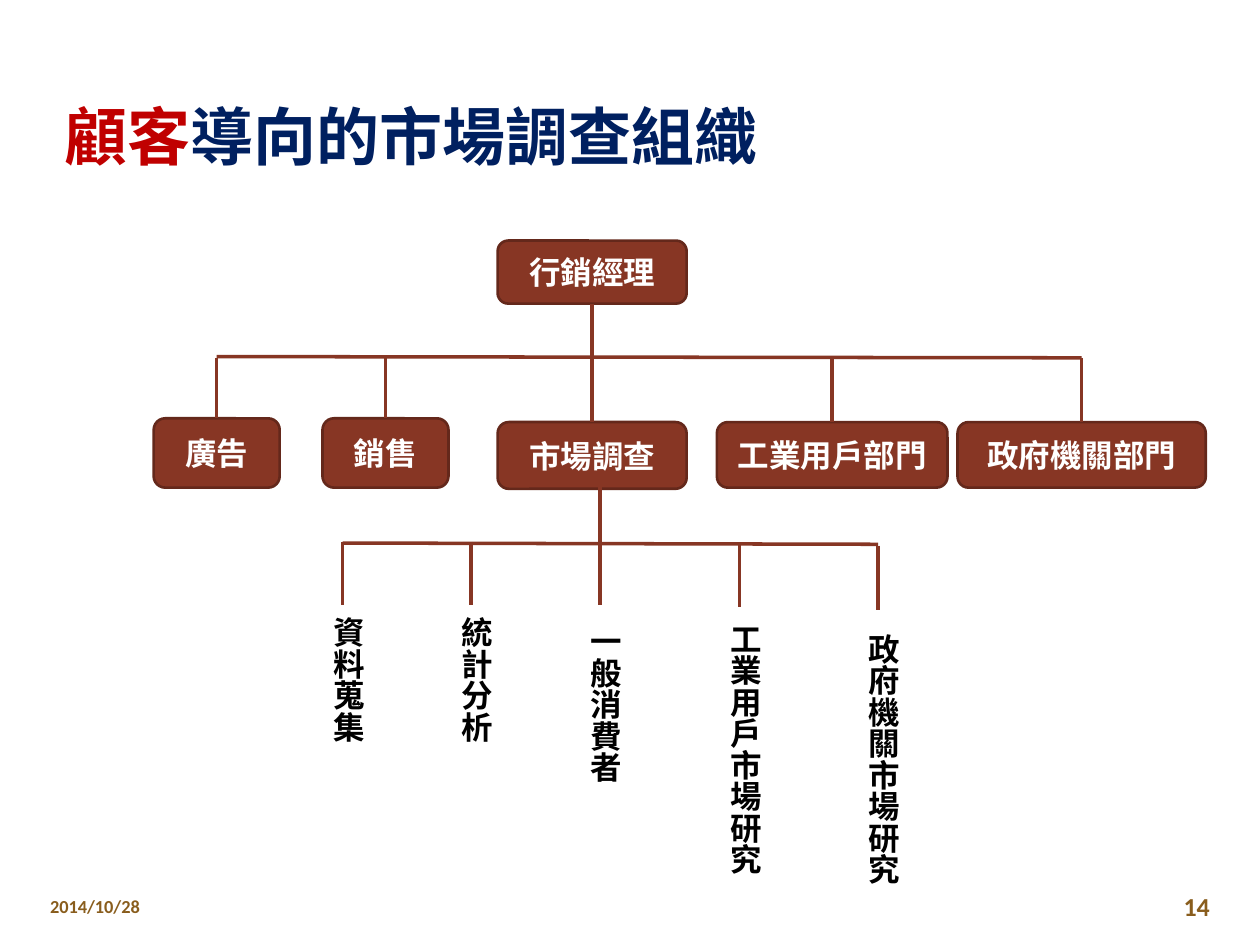
from lxml import etree
from pptx import Presentation, util as u
from pptx.dml.color import RGBColor
from pptx.enum import shapes, text
from pptx.oxml.ns import qn

WIDTH, HEIGHT = u.Inches(10), u.Inches(7.5)
COLUMNS, ROWS = 100, 75
BRICK = RGBColor(0x87, 0x36, 0x24)
DARK_BRICK = RGBColor(0x64, 0x28, 0x1B)
NAVY = RGBColor(0x00, 0x20, 0x60)
RED = RGBColor(0xC0, 0x00, 0x00)
OCHRE = RGBColor(0x89, 0x5D, 0x1D)
BLACK = RGBColor(0x00, 0x00, 0x00)
WHITE = RGBColor(0xFF, 0xFF, 0xFF)
CJK, LATIN = "Noto Sans CJK SC", "Calibri"

MANAGER = ("行銷經理", 39.5, 19.1, 15, 5)
DEPARTMENTS = [
    ("廣告", 12.2, 33.2, 10, 5.5),
    ("銷售", 25.6, 33.2, 10, 5.5),
    ("市場調查", 39.5, 33.5, 15, 5.3),
    ("工業用戶部門", 56.9, 33.5, 18.3, 5.2),
    ("政府機關部門", 76, 33.5, 19.7, 5.2),
]
RESEARCH = 2
TASKS = [
    ("資料蒐集", 27.2, 43, 48, 48, 11.1),
    ("統計分析", 37.4, 43, 48, 48, 11.1),
    ("一般消費者", 47.6, 38.6, 48, 48.7, 13.6),
    ("工業用戶市場研究", 58.7, 43.2, 48.2, 48.5, 21.2),
    ("政府機關市場研究", 69.7, 43.3, 48.4, 49.3, 21.2),
]


def col(count):
    return round(WIDTH * count / COLUMNS)


def row(count):
    return round(HEIGHT * count / ROWS)


def place(left, top, width, height):
    return col(left), row(top), col(width), row(height)


def add_run(paragraph, words, size, color, font=CJK):
    run = paragraph.add_run()
    run.text = words
    run.font.size = u.Pt(size)
    run.font.bold = True
    run.font.name = font
    run.font.color.rgb = color
    latin = run.font._element.find(qn("a:latin"))
    east_asian = etree.Element(qn("a:ea"), typeface=font)
    latin.addnext(east_asian)


def add_label(slide, area, runs, size, font=CJK, align=text.PP_ALIGN.LEFT,
              anchor=text.MSO_ANCHOR.MIDDLE):
    frame = slide.shapes.add_textbox(*place(*area)).text_frame
    frame.word_wrap = True
    frame.vertical_anchor = anchor
    paragraph = frame.paragraphs[0]
    paragraph.alignment = align
    for words, color in runs:
        add_run(paragraph, words, size, color, font)
    return frame


def add_unit(slide, name, *area):
    unit = slide.shapes.add_shape(
        shapes.MSO_SHAPE.ROUNDED_RECTANGLE, *place(*area))
    unit.shadow.inherit = False
    unit.fill.solid()
    unit.fill.fore_color.rgb = BRICK
    unit.line.color.rgb = DARK_BRICK
    unit.line.width = u.Pt(1.5)
    frame = unit.text_frame
    frame.word_wrap = True
    frame.vertical_anchor = text.MSO_ANCHOR.MIDDLE
    paragraph = frame.paragraphs[0]
    paragraph.alignment = text.PP_ALIGN.CENTER
    add_run(paragraph, name, 18, WHITE)
    return unit


def add_branch(slide, x1, y1, x2, y2):
    branch = slide.shapes.add_connector(
        shapes.MSO_CONNECTOR.STRAIGHT, col(x1), row(y1), col(x2), row(y2))
    branch.line.color.rgb = BRICK
    branch.line.width = u.Pt(2)
    etree.SubElement(branch._element.spPr, qn("a:effectLst"))
    return branch


def add_task(slide, name, x, branch_top, branch_bottom, top, height):
    add_branch(slide, x, branch_top, x, branch_bottom)
    frame = add_label(slide, (x - 2.6, top, 5, height), [(name, BLACK)], 18,
                      anchor=text.MSO_ANCHOR.TOP)
    frame.word_wrap = False
    frame.auto_size = text.MSO_AUTO_SIZE.SHAPE_TO_FIT_TEXT
    frame._txBody.bodyPr.set("vert", "eaVert")


def add_departments(slide):
    manager = add_unit(slide, *MANAGER)
    centres = [left + width / 2 for _, left, _, width, _ in DEPARTMENTS]
    add_branch(slide, centres[0], 28.3, centres[-1], 28.4)
    for index, (department, centre) in enumerate(zip(DEPARTMENTS, centres)):
        unit = add_unit(slide, *department)
        branch = add_branch(slide, centre, 28.4, centre, department[2])
        if index == RESEARCH:
            branch.begin_connect(manager, 2)
        branch.end_connect(unit, 0)


def add_tasks(slide):
    add_branch(slide, TASKS[0][1], 43.1, TASKS[-1][1], 43.2)
    for task in TASKS:
        add_task(slide, *task)


def main():
    deck = Presentation()
    deck.slide_width, deck.slide_height = WIDTH, HEIGHT
    slide = deck.slides.add_slide(deck.slide_layouts[6])

    title = add_label(slide, (3, 2.5, 94, 11.7),
                      [("顧客", RED), ("導向的市場調查組織", NAVY)], 36,
                      anchor=text.MSO_ANCHOR.BOTTOM)
    title.margin_left = col(2.1)
    title.paragraphs[0].space_before = u.Pt(4)
    add_departments(slide)
    add_tasks(slide)
    add_label(slide, (3, 70.3, 23.3, 3.2), [("2014/10/28", OCHRE)], 10.5, LATIN)
    add_label(slide, (87.4, 70.3, 9.6, 3.2), [("14", OCHRE)], 14.8, LATIN,
              text.PP_ALIGN.RIGHT)
    deck.save("out.pptx")


if __name__ == "__main__":
    main()
